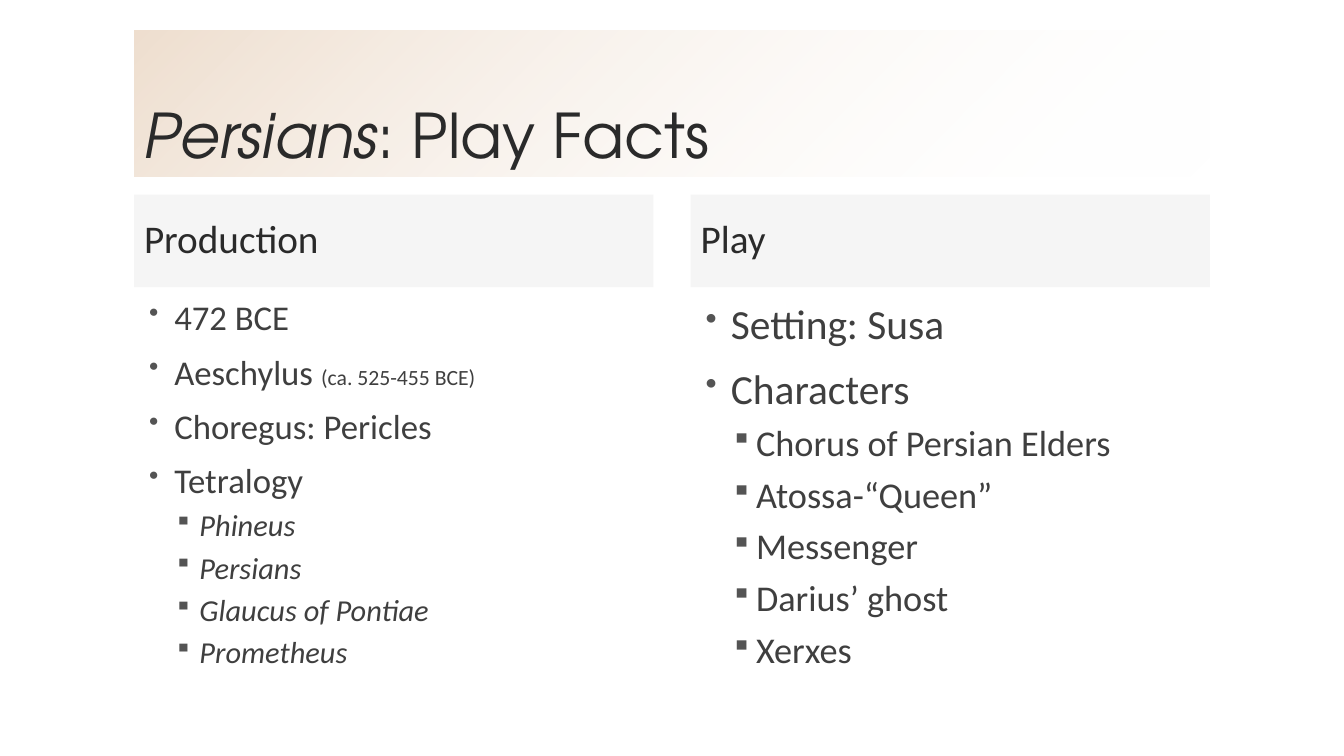
from dataclasses import dataclass

from lxml import etree
from pptx import Presentation
from pptx import util as u
from pptx.dml.color import RGBColor
from pptx.enum import shapes, text
from pptx.oxml.ns import qn

BODY_FONT, TITLE_FONT = "Calibri", "TeX Gyre Adventor"
DARK, GRAY, BULLET = "2A2A2A", "3F3F3F", "545454"
LEFT, COL_W, COL_STEP = 1.33, 5.15, 5.52


@dataclass
class Run:
    text: str
    size: float
    color: str = GRAY
    font: str = BODY_FONT
    italic: bool = False


@dataclass
class Level:
    mark: str
    indent: float
    before: float


@dataclass
class Column:
    heading: str
    facts: list[list[Run]]
    details: list[list[Run]]
    spacing: float


LEVELS = [Level("•", 0.3, 18), Level("▪", 0.55, 12)]

COLUMNS = [
    Column(
        "Production",
        [[Run("472 BCE", 24.8)],
         [Run("Aeschylus ", 24.8), Run("(ca. 525-455 BCE)", 15.5)],
         [Run("Choregus: Pericles", 24.8)],
         [Run("Tetralogy", 24.8)]],
        [[Run(play, 21.7, italic=True)] for play in
         ("Phineus", "Persians", "Glaucus of Pontiae", "Prometheus")],
        0.7),
    Column(
        "Play",
        [[Run(fact, 29.6)] for fact in ("Setting: Susa", "Characters")],
        [[Run(role, 25.9)] for role in
         ("Chorus of Persian Elders", "Atossa-“Queen”", "Messenger",
          "Darius’ ghost", "Xerxes")],
        0.8),
]


def rgb(value: str) -> RGBColor:
    return RGBColor.from_string(value)


def set_alphas(sp, *percents: int) -> None:
    """Give each fill colour of the shape its opacity, in order."""
    for clr, pct in zip(sp.element.spPr.iter(qn("a:srgbClr")), percents):
        etree.SubElement(clr, qn("a:alpha"), val=str(pct * 1000))


def add_bullet(p, level: Level) -> None:
    pPr = p._p.get_or_add_pPr()
    pPr.set("marL", str(u.Inches(level.indent)))
    pPr.set("indent", str(u.Inches(-0.25)))
    clr = etree.SubElement(pPr, qn("a:buClr"))
    etree.SubElement(clr, qn("a:srgbClr"), val=BULLET)
    etree.SubElement(pPr, qn("a:buSzPct"), val="80000")
    etree.SubElement(pPr, qn("a:buChar"), char=level.mark)


def write(p, runs: list[Run], spacing: float) -> None:
    p.alignment = text.PP_ALIGN.LEFT
    p.line_spacing = spacing
    for run in runs:
        r = p.add_run()
        r.text = run.text
        r.font.size = u.Pt(run.size)
        r.font.name = run.font
        r.font.italic = run.italic
        r.font.color.rgb = rgb(run.color)


def add_panel(s, x: float, y: float, w: float, h: float, runs: list[Run],
              anchor: text.MSO_ANCHOR):
    sp = s.shapes.add_shape(shapes.MSO_SHAPE.RECTANGLE,
                            *map(u.Inches, (x, y, w, h)))
    sp.shadow.inherit = False
    sp.line.fill.background()
    tf = sp.text_frame
    tf.word_wrap = True
    tf.vertical_anchor = anchor
    write(tf.paragraphs[0], runs, 0.9)
    return sp


def add_title(s) -> None:
    runs = [Run("Persians", 44, DARK, TITLE_FONT, True),
            Run(": Play Facts", 44, DARK, TITLE_FONT)]
    sp = add_panel(s, LEFT, 0.3, 10.67, 1.45, runs, text.MSO_ANCHOR.BOTTOM)
    sp.fill.gradient()
    sp.fill.gradient_angle = 315  # counter-clockwise: towards bottom right
    for stop, color in zip(sp.fill.gradient_stops, ("CE9F71", "FFFFFF")):
        stop.color.rgb = rgb(color)
    set_alphas(sp, 34, 0)


def add_column(s, x: float, col: Column) -> None:
    # Heading band
    sp = add_panel(s, x, 1.93, COL_W, 0.92, [Run(col.heading, 28, DARK)],
                   text.MSO_ANCHOR.MIDDLE)
    sp.fill.solid()
    sp.fill.fore_color.rgb = rgb("BFBFBF")
    set_alphas(sp, 15)

    # Two-level list
    tf = s.shapes.add_textbox(*map(u.Inches, (x, 3, COL_W, 3.75))).text_frame
    tf.word_wrap = True
    items = [(0, runs) for runs in col.facts] + [(1, runs) for runs in col.details]
    for i, (depth, runs) in enumerate(items):
        p = tf.add_paragraph() if i else tf.paragraphs[0]
        p.level = depth
        p.space_before = u.Pt(LEVELS[depth].before)
        write(p, runs, col.spacing)
        add_bullet(p, LEVELS[depth])


def main() -> None:
    prs = Presentation()
    prs.slide_width, prs.slide_height = u.Inches(13.33), u.Inches(7.5)
    s = prs.slides.add_slide(prs.slide_layouts[6])
    add_title(s)
    for i, col in enumerate(COLUMNS):
        add_column(s, LEFT + i * COL_STEP, col)
    prs.save("out.pptx")


if __name__ == "__main__":
    main()
